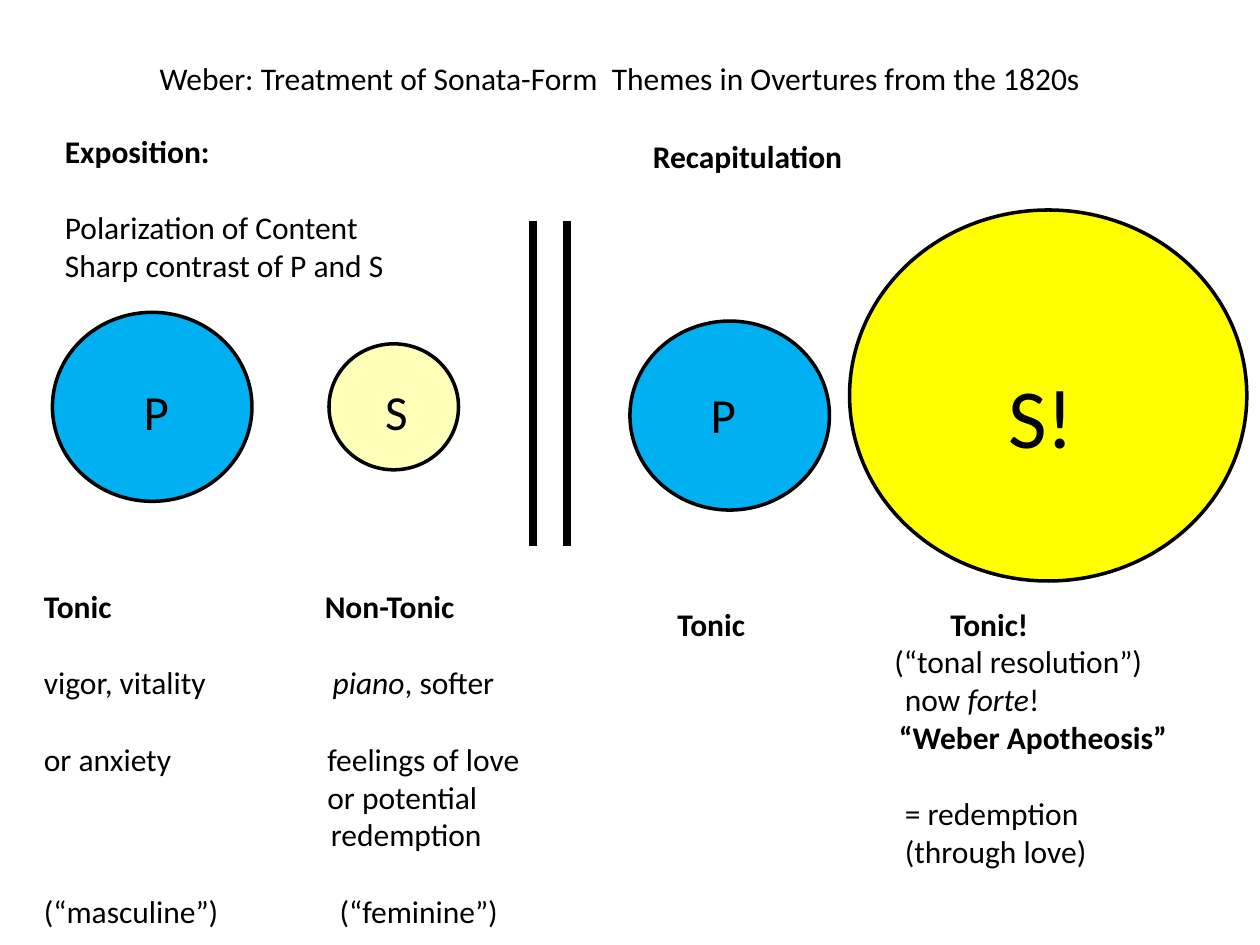
from lxml.etree import SubElement
from pptx import Presentation
from pptx.dml.color import RGBColor
from pptx.enum.shapes import MSO_CONNECTOR, MSO_SHAPE
from pptx.enum.text import MSO_ANCHOR, PP_ALIGN
from pptx.oxml.ns import qn
from pptx.util import Pt

FONT = "Calibri"
BLACK, BLUE, YELLOW = "000000", "00B0F0", "FFFF00"
LINE_GAP = 22  # one empty line of 18 point text

# Content: a paragraph is (runs, tab stops, space before); a run is (text, style)
TITLE = "Weber: Treatment of Sonata-Form  Themes in Overtures from the 1820s"
TITLE_BOX = (84, 30, 543, 29)

TEXT_BLOCKS = [
    ((30, 72, 282, 94), [
        ([("Exposition:", "b")], [], 0),
        ([("Polarization of Content", "")], [], LINE_GAP),
        ([("Sharp contrast of P and S", "")], [], 0),
    ]),
    ((366, 75, 138, 29), [
        ([("Recapitulation", "b")], [], 0),
    ]),
    ((18, 332, 306, 181), [
        ([("Tonic\tNon-Tonic", "b")], [160.5], 0),
        ([("vigor, vitality\t", ""), ("piano", "i"), (", softer", "")], [165], LINE_GAP),
        ([("or anxiety\tfeelings of love", "")], [162], LINE_GAP),
        ([("\tor potential", "")], [162], 0),
        ([("\tredemption", "")], [164], 0),
        ([("(“masculine”)\t(“feminine”)", "")], [169], LINE_GAP),
    ]),
    ((360, 342, 320, 160), [
        ([("\tTonic\tTonic!", "b")], [20, 176], 0),
        ([("\t(“tonal resolution”)", "")], [144], 0),
        ([("\tnow ", ""), ("forte", "i"), ("!", "")], [150], 0),
        ([("\t“Weber Apotheosis”", "b")], [146.5], 0),
        ([("\t= redemption", "")], [150], LINE_GAP),
        ([("\t(through love)", "")], [150], 0),
    ]),
]

# Themes: circle box, fill, opacity in percent, label, label size, label box
THEMES = [
    ((30, 178.5, 114, 108), BLUE, 100, "P", 28, (75, 214.5, 24, 41)),
    ((188, 196.5, 74, 72), YELLOW, 27, "S", 28, (213, 214.5, 24, 41)),
    ((360, 183.5, 114, 108), BLUE, 100, "P", 28, (399, 216, 24, 41)),
    ((485.5, 120, 227, 212), YELLOW, 100, "S!", 48, (569, 204.5, 60, 65.5)),
]

BAR_POSITIONS = (304.5, 324)
BAR_TOP, BAR_BOTTOM = 126, 312


def color(value):
    return RGBColor.from_string(value)


def points(box):
    return [Pt(value) for value in box]


def add_run(paragraph, text, size=18, style=""):
    run = paragraph.add_run()
    run.text = text
    font = run.font
    font.name, font.size = FONT, Pt(size)
    font.bold, font.italic = style == "b", style == "i"
    font.color.rgb = color(BLACK)


def set_tabs(paragraph, stops):
    tab_list = SubElement(paragraph._p.get_or_add_pPr(), qn("a:tabLst"))
    for stop in stops:
        SubElement(tab_list, qn("a:tab"), pos=str(int(Pt(stop))), algn="l")


def add_text_box(slide, box):
    frame = slide.shapes.add_textbox(*points(box)).text_frame
    frame.word_wrap = True
    return frame


def add_text_block(slide, box, content):
    frame = add_text_box(slide, box)
    for index, (runs, stops, space) in enumerate(content):
        paragraph = frame.add_paragraph() if index else frame.paragraphs[0]
        paragraph.space_before = Pt(space)
        if stops:
            set_tabs(paragraph, stops)
        for text, style in runs:
            add_run(paragraph, text, style=style)


def add_theme(slide, box, fill, opacity, label, size, label_box):
    shape = slide.shapes.add_shape(MSO_SHAPE.OVAL, *points(box))
    shape.shadow.inherit = False
    shape.fill.solid()
    shape.fill.fore_color.rgb = color(fill)
    if opacity < 100:
        fill_color = shape._element.spPr.find(".//" + qn("a:srgbClr"))
        SubElement(fill_color, qn("a:alpha"), val=str(opacity * 1000))
    shape.line.color.rgb = color(BLACK)
    shape.line.width = Pt(2)
    add_run(add_text_box(slide, label_box).paragraphs[0], label, size)


def add_bar(slide, left):
    bar = slide.shapes.add_connector(
        MSO_CONNECTOR.STRAIGHT, Pt(left), Pt(BAR_TOP), Pt(left), Pt(BAR_BOTTOM))
    bar.line.color.rgb = color(BLACK)
    bar.line.width = Pt(4.5)
    SubElement(bar._element.spPr, qn("a:effectLst"))


def main():
    presentation = Presentation()
    presentation.slide_width, presentation.slide_height = Pt(720), Pt(540)
    slide = presentation.slides.add_slide(presentation.slide_layouts[5])

    # Title
    title = slide.shapes.title
    title.left, title.top, title.width, title.height = points(TITLE_BOX)
    title.text_frame.vertical_anchor = MSO_ANCHOR.TOP
    paragraph = title.text_frame.paragraphs[0]
    paragraph.alignment = PP_ALIGN.LEFT
    add_run(paragraph, TITLE)

    # Theme circles, double bar and descriptions
    for theme in THEMES:
        add_theme(slide, *theme)
    for left in BAR_POSITIONS:
        add_bar(slide, left)
    for box, content in TEXT_BLOCKS:
        add_text_block(slide, box, content)

    presentation.save("out.pptx")


if __name__ == "__main__":
    main()
